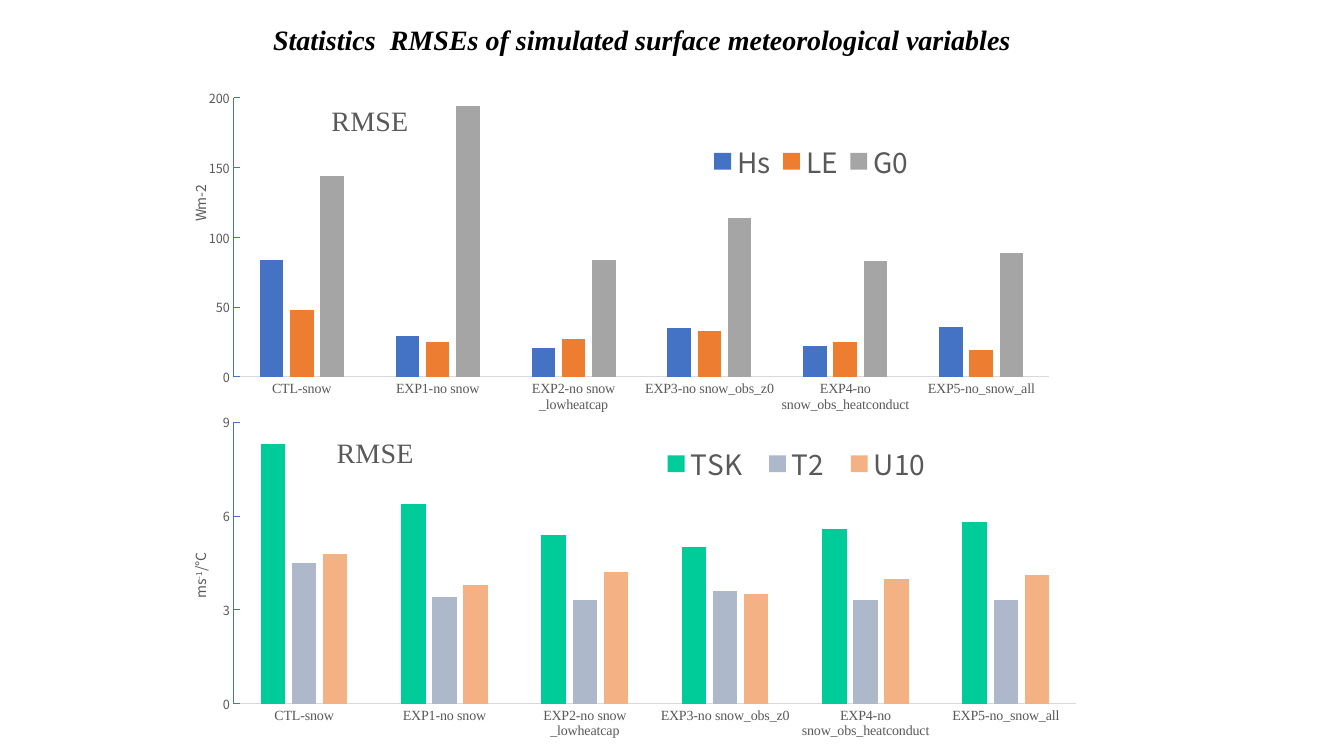
from lxml import etree
from pptx import Presentation
from pptx import util as u
from pptx.chart.data import CategoryChartData
from pptx.dml.color import RGBColor
from pptx.enum import chart as ch, text
from pptx.oxml.ns import qn

COLORS = {"black": "000000", "grey": "595959", "baseline": "D9D9D9", "axis": "4472C4",
          "Hs": "4472C4", "LE": "ED7D31", "G0": "A5A5A5",
          "TSK": "00CC99", "T2": "ADB9CA", "U10": "F4B183"}
SERIF, SANS = "Times New Roman", "Noto Sans CJK SC"
EXPERIMENTS = ["CTL-snow", "EXP1-no snow", "EXP2-no snow _lowheatcap",
               "EXP3-no snow_obs_z0", "EXP4-no snow_obs_heatconduct", "EXP5-no_snow_all"]


def rgb(name):
    return RGBColor.from_string(COLORS[name])


def set_font(font, size, name, color="grey", bold=False, italic=False):
    font.size, font.name = u.Pt(size), name
    font.bold, font.italic = bold, italic
    font.color.rgb = rgb(color)


def set_layout(element, index, inner=False, **fractions):
    """Place a chart part by fractions of the chart's size."""
    for old in element.findall(qn("c:layout")):
        element.remove(old)
    layout = etree.Element(qn("c:layout"))
    manual = etree.SubElement(layout, qn("c:manualLayout"))
    settings = [("layoutTarget", "inner")] if inner else []
    settings += [("xMode", "edge"), ("yMode", "edge"), *fractions.items()]
    for tag, value in settings:
        etree.SubElement(manual, qn(f"c:{tag}")).set("val", str(value))
    element.insert(index, layout)


def clear_plot_frame(plot_area):
    sp_pr = etree.SubElement(plot_area, qn("c:spPr"))
    etree.SubElement(sp_pr, qn("a:noFill"))
    etree.SubElement(etree.SubElement(sp_pr, qn("a:ln")), qn("a:noFill"))


def add_chart_title(owner, runs, size, font, x, y):
    """Title a chart or an axis; runs are (text, superscript) pairs."""
    title = owner.chart_title if hasattr(owner, "chart_title") else owner.axis_title
    p = title.text_frame.paragraphs[0]
    for words, raised in runs:
        r = p.add_run()
        r.text = words
        set_font(r.font, size, font)
        if raised:
            r.font._element.set("baseline", "30000")
    set_layout(title._element, 1, x=x, y=y)


def style_axis(axis, size, font, line, tick):
    axis.has_major_gridlines = False
    axis.major_tick_mark = tick
    axis.minor_tick_mark = ch.XL_TICK_MARK.NONE
    set_font(axis.tick_labels.font, size, font)
    axis.format.line.color.rgb = rgb(line)
    axis.format.line.width = u.Pt(0.75)


def add_rmse_chart(s, box, series, top, step, unit, unit_at, title_at, legend, plot):
    data = CategoryChartData()
    data.categories = EXPERIMENTS
    for name, values in series.items():
        data.add_series(name, values)
    chart = s.shapes.add_chart(ch.XL_CHART_TYPE.COLUMN_CLUSTERED,
                               *map(u.Inches, box), data).chart
    set_font(chart.font, 10, SANS, "black")

    bars = chart.plots[0]
    bars.gap_width, bars.overlap, bars.vary_by_categories = 219, -27, False
    for bar in bars.series:
        bar.format.fill.solid()
        bar.format.fill.fore_color.rgb = rgb(bar.name)

    style_axis(chart.category_axis, 10, SERIF, "baseline", ch.XL_TICK_MARK.NONE)
    values = chart.value_axis
    style_axis(values, 9, SANS, "axis", ch.XL_TICK_MARK.INSIDE)
    values.minimum_scale, values.maximum_scale, values.major_unit = 0, top, step
    values.tick_labels.number_format = "0"
    values.tick_labels.number_format_is_linked = False

    add_chart_title(chart, [("RMSE", False)], 20, SERIF, *title_at)
    add_chart_title(values, unit, 10, SANS, *unit_at)
    chart.has_legend = True
    chart.legend.position = ch.XL_LEGEND_POSITION.BOTTOM
    chart.legend.include_in_layout = False
    set_font(chart.legend.font, 20, SANS)
    set_layout(chart.legend._element, 1, **dict(zip("xywh", legend)))
    plot_area = chart._chartSpace.chart.plotArea
    set_layout(plot_area, 0, inner=True, **dict(zip("xywh", plot)))
    clear_plot_frame(plot_area)


def add_heading(s, words):
    tf = s.shapes.add_textbox(*map(u.Inches, (2.61, 0.21, 9.05, 0.4))).text_frame
    tf.word_wrap = True
    tf.vertical_anchor = text.MSO_ANCHOR.MIDDLE
    p = tf.paragraphs[0]
    p.text = words
    p.line_spacing = 0.9
    set_font(p.runs[0].font, 20, SERIF, "black", bold=True, italic=True)


def main():
    prs = Presentation()
    prs.slide_width, prs.slide_height = u.Inches(13.33), u.Inches(7.5)
    s = prs.slides.add_slide(prs.slide_layouts[6])
    add_rmse_chart(
        s, (1.85, 0.79, 8.67, 3.52),
        {"Hs": (84, 29, 21, 35, 22, 36),
         "LE": (48, 25, 27, 33, 25, 19),
         "G0": (144, 194, 84, 114, 83, 89)},
        top=200, step=50, unit=[("Wm-2", False)], unit_at=(0, 0.29),
        title_at=(0.16, 0.05), legend=(0.59, 0.16, 0.25, 0.14),
        plot=(0.054, 0.051, 0.933, 0.787))
    add_heading(s, "Statistics  RMSEs of simulated surface meteorological variables")
    add_rmse_chart(
        s, (1.84, 4.09, 9.05, 3.41),
        {"TSK": (8.3, 6.4, 5.4, 5, 5.6, 5.8),
         "T2": (4.5, 3.4, 3.3, 3.6, 3.3, 3.3),
         "U10": (4.8, 3.8, 4.2, 3.5, 4, 4.1)},
        top=9, step=3, unit=[("ms", False), ("-1", True), ("/°C", False)],
        unit_at=(0, 0.4), title_at=(0.16, 0.05), legend=(0.51, 0.09, 0.32, 0.12),
        plot=(0.053, 0.029, 0.923, 0.819))
    prs.save("out.pptx")


if __name__ == "__main__":
    main()
